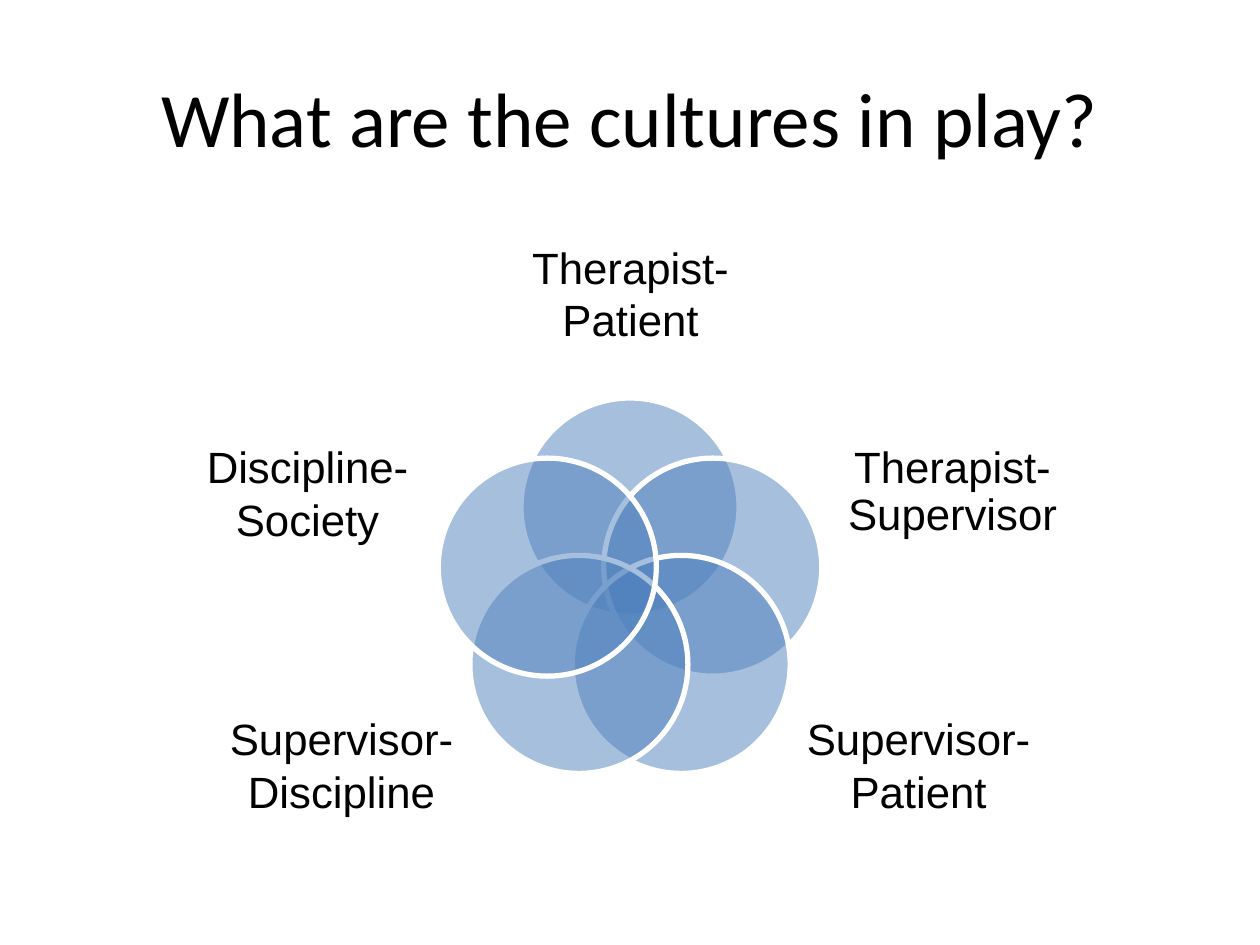
from math import cos, pi, sin

from lxml.etree import SubElement
from pptx import Presentation
from pptx.dml.color import RGBColor
from pptx.enum.shapes import MSO_SHAPE
from pptx.enum.text import MSO_ANCHOR, PP_ALIGN
from pptx.oxml.ns import qn
from pptx.util import Pt

BLACK = RGBColor(0x00, 0x00, 0x00)
WHITE = RGBColor(0xFF, 0xFF, 0xFF)
BLUE = RGBColor(0x4F, 0x81, 0xBD)
EMU_PER_PX = 914400 / 126

CENTER_X, CENTER_Y = 630, 594
RING_RADIUS = 87
DIAMETER = 218

# Clockwise from the top: text, left, top, width, height, line spacing
LABELS = [
    ("Therapist-Patient", 504, 220, 253, 146, None),
    ("Therapist-Supervisor", 839, 413, 227, 159, 0.9),
    ("Supervisor-Patient", 805, 685, 227, 159, None),
    ("Supervisor-Discipline", 228, 685, 227, 159, None),
    ("Discipline-Society", 194, 413, 227, 159, None),
]


def px(*lengths):
    return [round(n * EMU_PER_PX) for n in lengths]


def format_text(tf, font, size):
    """Centre the text both ways and set its font."""
    tf.word_wrap = True
    tf.vertical_anchor = MSO_ANCHOR.MIDDLE
    p = tf.paragraphs[0]
    p.alignment = PP_ALIGN.CENTER
    r = p.runs[0]
    r.font.name = font
    r.font.size = Pt(size)
    r.font.color.rgb = BLACK


prs = Presentation()
prs.slide_width, prs.slide_height = px(1260, 945)
slide = prs.slides.add_slide(prs.slide_layouts[5])

title = slide.shapes.title
title.left, title.top, title.width, title.height = px(63, 38, 1134, 158)
title.text_frame.text = "What are the cultures in play?"
format_text(title.text_frame, "Calibri", 44)

for i, (label, left, top, width, height, spacing) in enumerate(LABELS):
    angle = 2 * pi * i / len(LABELS)
    x = CENTER_X + RING_RADIUS * sin(angle) - DIAMETER / 2
    y = CENTER_Y - RING_RADIUS * cos(angle) - DIAMETER / 2
    circle = slide.shapes.add_shape(MSO_SHAPE.OVAL, *px(x, y, DIAMETER, DIAMETER))
    circle.shadow.inherit = False
    circle.fill.solid()
    circle.fill.fore_color.rgb = BLUE
    color = circle.fill._xPr.find(qn("a:solidFill"))[0]
    SubElement(color, qn("a:alpha")).set("val", "50000")
    circle.line.color.rgb = WHITE
    circle.line.width = Pt(3)

    box = slide.shapes.add_textbox(*px(left, top, width, height))
    tf = box.text_frame
    tf.margin_left = tf.margin_right = tf.margin_top = tf.margin_bottom = 0
    tf.text = label
    format_text(tf, "Arial", 25)
    tf.paragraphs[0].line_spacing = spacing

prs.save("out.pptx")
